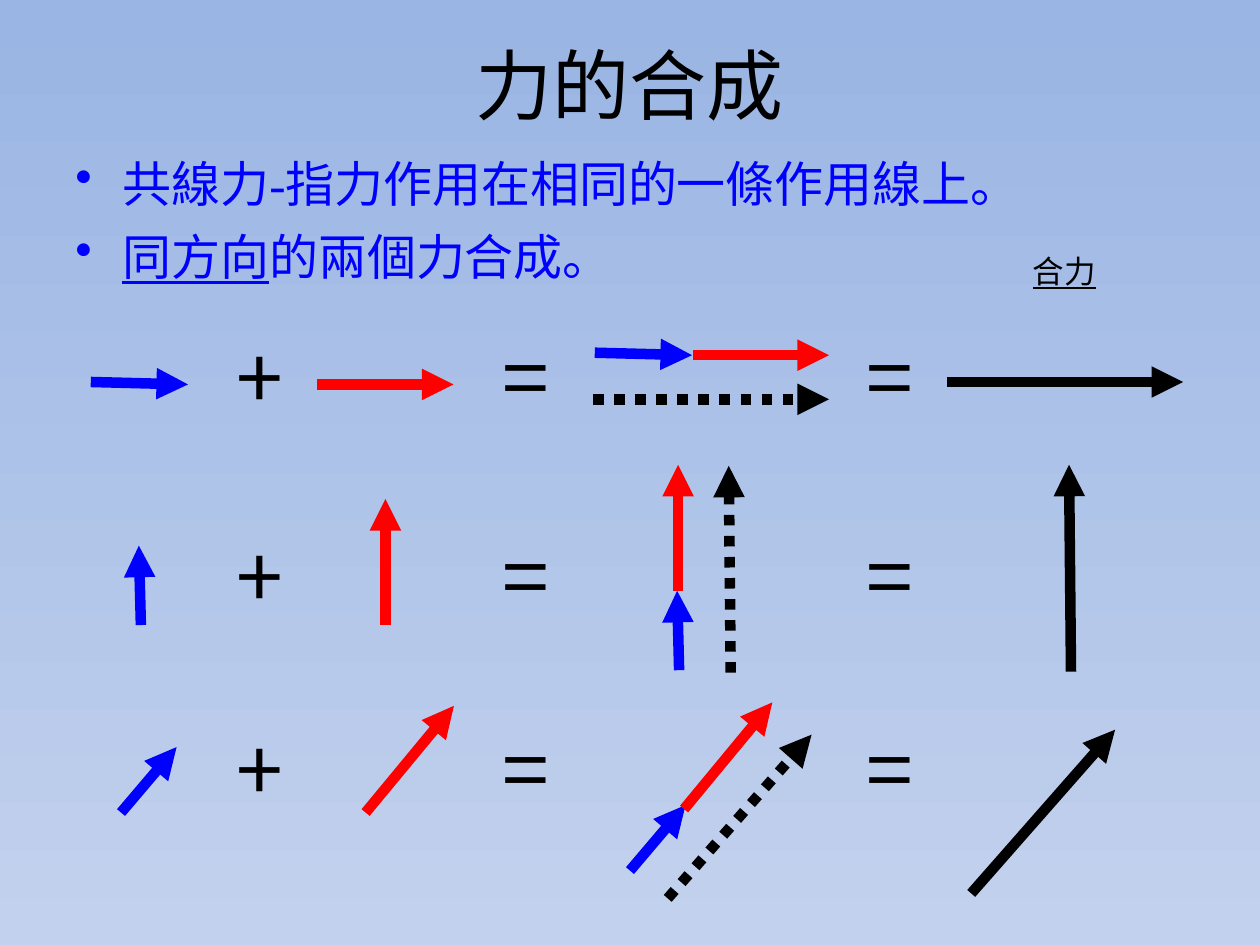
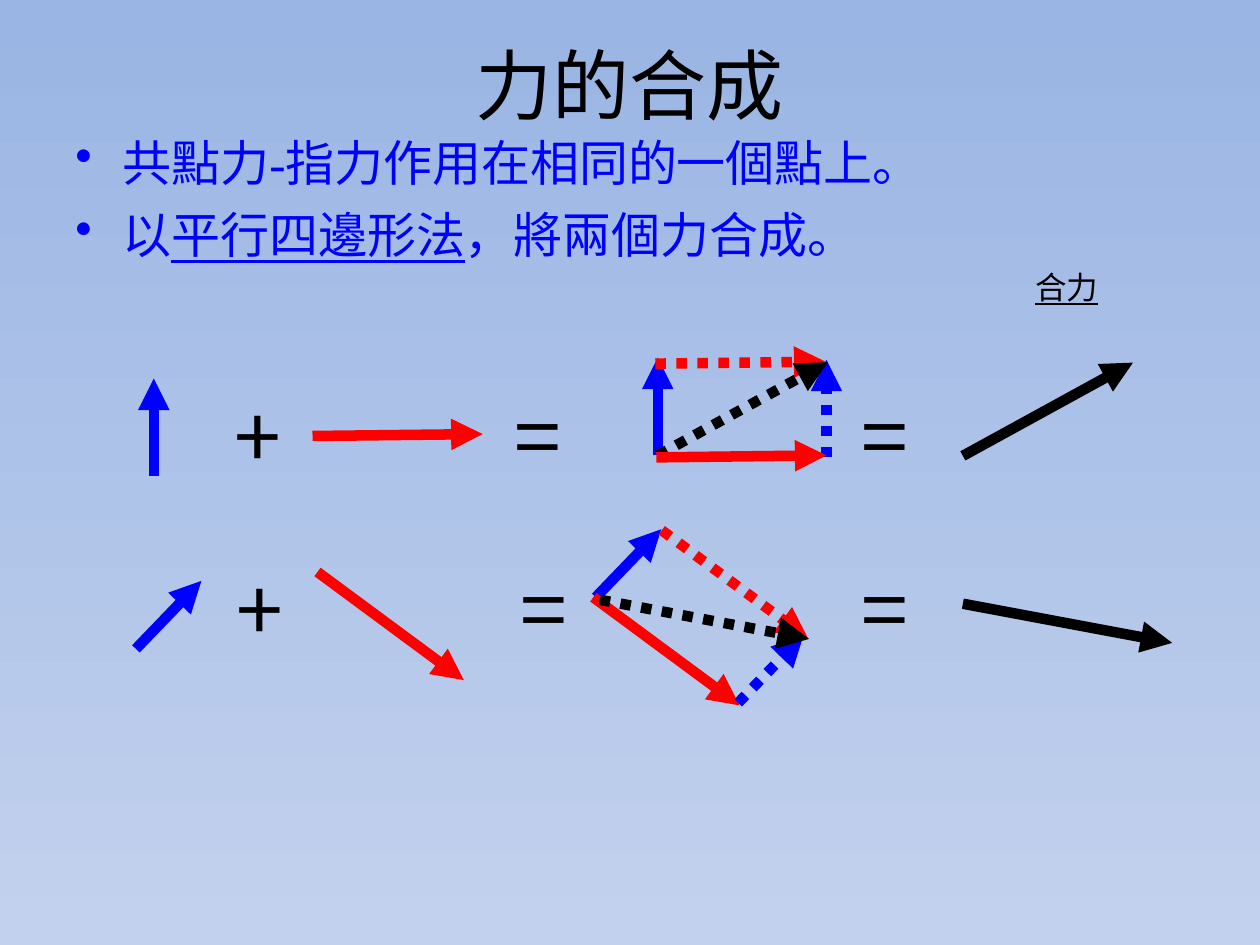
from pptx import Presentation as Deck
from pptx.dml.color import RGBColor as Rgb
from pptx.enum.dml import MSO_LINE_DASH_STYLE as Dash
from pptx.enum.shapes import MSO_CONNECTOR as Link
from pptx.enum.text import MSO_AUTO_SIZE as Fit, PP_ALIGN as Align
from pptx.oxml.ns import qn
from pptx.util import Cm, Pt
from lxml.etree import SubElement as Sub

HUE = {"a": "0000FF", "b": "FF0000", "sum": "000000",
       "top": "9AB5E4", "base": "C2D1ED"}
SANS, SERIF = "Noto Sans CJK SC", "Times New Roman"

# Text formats
HEAD = {"size": Pt(44), "name": SANS, "color": "sum"}
BODY = {"size": Pt(28), "name": SERIF, "color": "a"}
SIGN = {"size": Pt(48), "name": SANS, "color": "sum"}
NOTE = {"size": Pt(18), "name": SERIF, "color": "sum", "underline": True}


def rgb(key):
    return Rgb.from_string(HUE[key])


def style(font, form):
    for key, val in form.items():
        if key == "color":
            font.color.rgb = rgb(val)
        else:
            setattr(font, key, val)


def add_page(deck):
    page = deck.slides.add_slide(deck.slide_layouts[6])
    fill = page.background.fill
    fill.gradient()
    fill.gradient_angle = 270
    for stop, key in zip(fill.gradient_stops, ("top", "base")):
        stop.color.rgb = rgb(key)
    return page


def add_box(page, x, y, wide, high, wrap=True):
    box = page.shapes.add_textbox(Cm(x), Cm(y), Cm(wide), Cm(high))
    frame = box.text_frame
    frame.word_wrap = wrap
    frame.auto_size = Fit.NONE if wrap else Fit.SHAPE_TO_FIT_TEXT
    return frame


def add_run(para, text, form):
    run = para.add_run()
    run.text = text
    style(run.font, form)


def add_title(page, text):
    para = add_box(page, 1.27, 0.64, 22.86, 3.18).paragraphs[0]
    para.alignment = Align.CENTER
    add_run(para, text, HEAD)


def add_list(page, y, items):
    """Each item is a list of (text, underlined) parts."""
    frame = add_box(page, 1.27, y, 22.86, 2.84)
    for i, parts in enumerate(items):
        para = frame.add_paragraph() if i else frame.paragraphs[0]
        if i:
            para.space_before = Pt(8)
        props = para._p.get_or_add_pPr()
        props.set("marL", str(Cm(0.95)))
        props.set("indent", str(-Cm(0.95)))
        Sub(props, qn("a:buChar"), char="•")
        for text, under in parts:
            add_run(para, text, {**BODY, "underline": under})


def add_mark(page, text, x, y, wide, high, form):
    frame = add_box(page, x, y, wide, high, wrap=False)
    add_run(frame.paragraphs[0], text, form)


def add_signs(page, y, spots):
    for text, x in zip("+==", spots):
        add_mark(page, text, x, y, 1.37, 2.31, SIGN)


def add_arrow(page, key, x, y, step, dots):
    dx, dy = step
    arrow = page.shapes.add_connector(
        Link.STRAIGHT, Cm(x), Cm(y), Cm(x + dx), Cm(y + dy))
    line = arrow.line
    line.width = Pt(6)
    line.color.rgb = rgb(key)
    if dots:
        line.dash_style = Dash.ROUND_DOT
    Sub(line._get_or_add_ln(), qn("a:tailEnd"), type="triangle")
    Sub(arrow._element.spPr, qn("a:effectLst"))


def add_row(page, steps, arrows):
    """Draw the forces a, b and their sum from the given starts."""
    for key, x, y, *dots in arrows:
        add_arrow(page, key, x, y, steps[key], dots)


def add_line_page(deck):
    page = add_page(deck)
    add_title(page, "力的合成")
    add_list(page, 2.97, [
        [("共線力-指力作用在相同的一條作用線上。", False)],
        [("同方向", True), ("的兩個力合成。", False)]])
    add_mark(page, "合力", 20.57, 4.95, 1.8, 1.02, NOTE)
    for y in (6.43, 10.44, 14.35):
        add_signs(page, y, (4.52, 9.88, 17.22))
    # Level forces
    add_row(page, {"a": (1.96, 0.05), "b": (2.74, 0), "sum": (4.75, 0)}, [
        ("a", 1.83, 7.7), ("b", 6.4, 7.75),
        ("a", 11.99, 7.11), ("b", 13.97, 7.16),
        ("sum", 19.1, 7.7), ("sum", 11.96, 8.05, "dots")])
    # Upright forces
    add_row(page, {"a": (-0.04, -1.6), "b": (0, -2.54),
                   "sum": (-0.04, -4.17)}, [
        ("b", 7.77, 12.6), ("a", 2.84, 12.6),
        ("a", 13.69, 13.51), ("b", 13.67, 11.91),
        ("sum", 21.59, 13.54), ("sum", 14.73, 13.56, "dots")])
    # Slanted forces
    add_row(page, {"a": (1.12, -1.32), "b": (1.78, -2.15),
                   "sum": (2.9, -3.3)}, [
        ("a", 2.44, 16.38), ("b", 7.37, 16.38),
        ("a", 12.7, 17.55), ("b", 13.79, 16.31),
        ("sum", 19.58, 18.01), ("sum", 13.46, 18.11, "dots")])


def add_point_page(deck):
    page = add_page(deck)
    add_title(page, "力的合成")
    add_list(page, 2.54, [
        [("共點力-指力作用在相同的一個點上。", False)],
        [("以", False), ("平行四邊形法", True),
         ("，將兩個力合成。", False)]])
    add_mark(page, "合力", 20.62, 5.28, 1.8, 1.02, NOTE)
    add_signs(page, 7.62, (4.47, 10.13, 17.12))
    add_signs(page, 11.12, (4.52, 10.24, 17.12))
    # Right angle
    add_row(page, {"a": (0, -1.97), "b": (3.43, -0.04),
                   "sum": (3.43, -1.88)}, [
        ("a", 3.1, 9.6), ("b", 6.3, 8.79),
        ("a", 13.26, 9.18), ("a", 16.66, 9.22, "dots"),
        ("b", 13.21, 7.33, "dots"), ("sum", 13.26, 9.18, "dots"),
        ("b", 13.23, 9.22), ("sum", 19.41, 9.19)])
    # Slanted pair
    add_row(page, {"a": (1.32, -1.37), "b": (2.95, 2.18),
                   "sum": (4.22, 0.79)}, [
        ("b", 6.4, 11.53), ("a", 2.74, 13.08),
        ("a", 12.01, 12.04), ("b", 11.96, 12.04),
        ("a", 14.88, 14.17, "dots"), ("b", 13.34, 10.69, "dots"),
        ("sum", 12.09, 12.09, "dots"), ("sum", 19.41, 12.17)])


def main():
    deck = Deck()
    deck.slide_width, deck.slide_height = Cm(25.4), Cm(19.05)
    add_line_page(deck)
    add_point_page(deck)
    deck.save("out.pptx")


if __name__ == "__main__":
    main()
